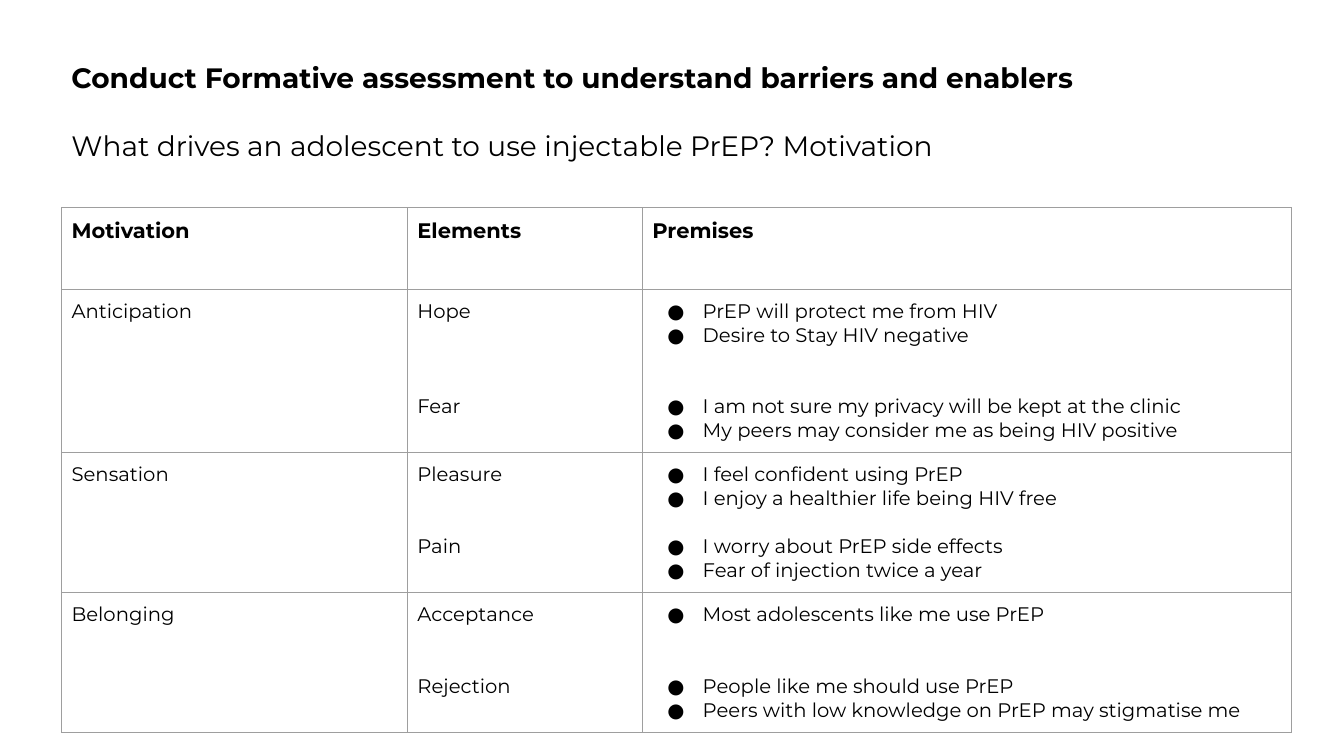
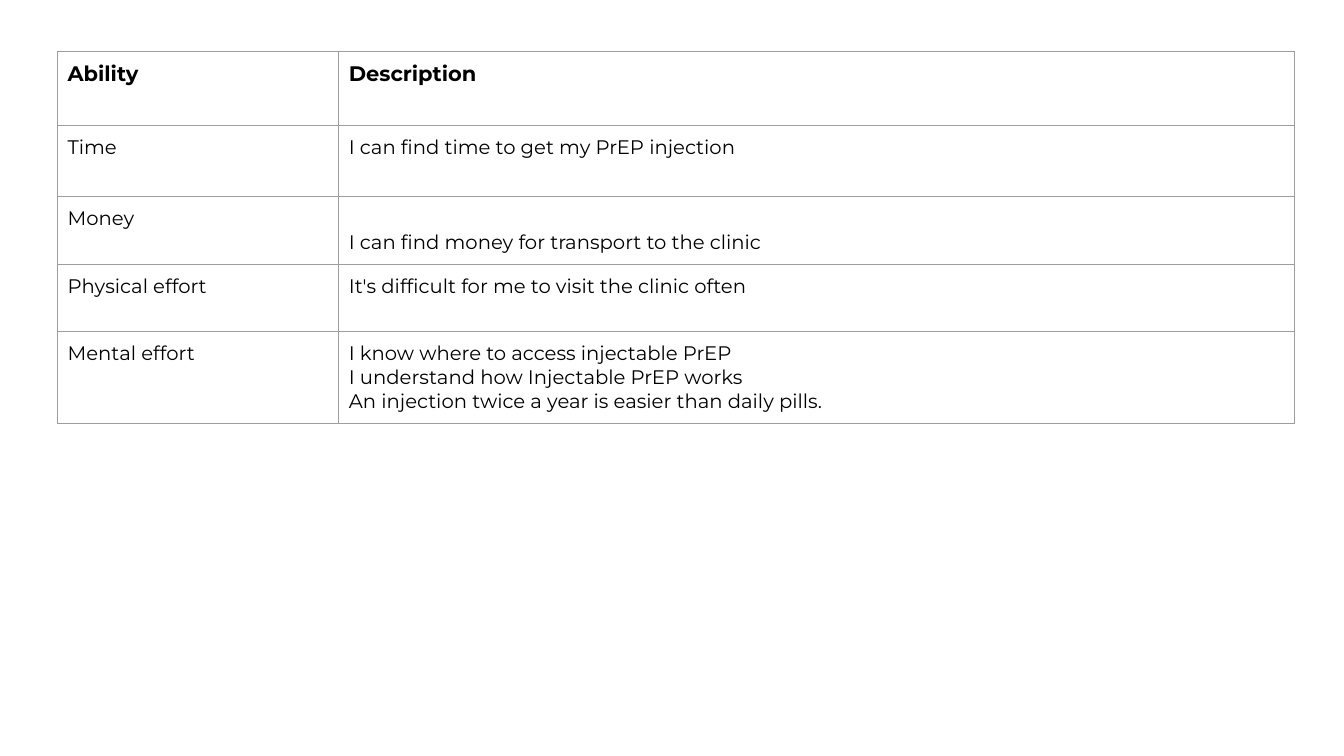
from lxml import etree
from pptx import Presentation
from pptx.dml.color import RGBColor
from pptx.enum.text import MSO_ANCHOR
from pptx.oxml.ns import qn
from pptx.util import Inches, Pt

TOP, BOTTOM = MSO_ANCHOR.TOP, MSO_ANCHOR.BOTTOM
COLORS = {"text": "000000", "grid": "9E9E9E"}
FACE = "Montserrat"
LEAD = 1.22
PAD = {"margin_" + side: Inches(0.1) for side in ("left", "right", "top", "bottom")}
STYLES = {
    "title": {"size": Pt(20), "bold": True},
    "lead": {"size": Pt(20), "bold": False},
    "head": {"size": Pt(15), "bold": True},
    "body": {"size": Pt(14), "bold": False},
}

MOTIVES = [
    ("Motivation", "Elements", "Premises"),
    ("Anticipation", "Hope\n\n\n\nFear",
     "PrEP will protect me from HIV\nDesire to Stay HIV negative\n\n\n"
     "I am not sure my privacy will be kept at the clinic\n"
     "My peers may consider me as being HIV positive"),
    ("Sensation", "Pleasure\n\n\nPain",
     "I feel confident using PrEP\nI enjoy a healthier life being HIV free\n\n"
     "I worry about PrEP side effects\nFear of injection twice a year"),
    ("Belonging", "Acceptance\n\n\nRejection",
     "Most adolescents like me use PrEP\n\n\nPeople like me should use PrEP\n"
     "Peers with low knowledge on PrEP may stigmatise me"),
]
SKILLS = [
    ("Ability", "Description"),
    ("Time", "I can find time to get my PrEP injection"),
    ("Money", "I can find money for transport to the clinic"),
    ("Physical effort", "It's difficult for me to visit the clinic often"),
    ("Mental effort",
     "I know where to access injectable PrEP\n"
     "I understand how Injectable PrEP works\n"
     "An injection twice a year is easier than daily pills."),
]


def apply(item, values):
    """Set every attribute named in a dict."""
    for name, value in values.items():
        setattr(item, name, value)


def node(parent, tag, **attrs):
    """Add a drawing element under a parent."""
    return etree.SubElement(parent, qn("a:" + tag), attrs)


def write(para, text, style):
    """Put one styled run in a paragraph."""
    run = para.add_run()
    run.text = text
    apply(run.font, {"name": FACE, **STYLES[style]})
    run.font.color.rgb = RGBColor.from_string(COLORS["text"])


def bullet(para):
    """Give a paragraph a round bullet and a hanging indent."""
    props = para._p.get_or_add_pPr()
    props.set("marL", str(Inches(0.5)))
    props.set("indent", str(Inches(-0.35)))
    node(node(props, "buClr"), "srgbClr", val=COLORS["text"])
    node(props, "buFont", typeface=FACE)
    node(props, "buChar", char="●")


def fill(frame, text, style, dots=False):
    """Write lines, turning each empty line into space before the next."""
    gap, first = 0, True
    for line in text.split("\n"):
        if not line:
            gap += 1
            continue
        para = frame.paragraphs[0] if first else frame.add_paragraph()
        para.space_before = Pt(round(gap * STYLES[style]["size"].pt * LEAD, 1))
        write(para, line, style)
        if dots:
            bullet(para)
        gap, first = 0, False


def border(cell):
    """Draw a thin line on all four sides of a cell."""
    props = cell._tc.get_or_add_tcPr()
    for spot, side in enumerate(("lnL", "lnR", "lnT", "lnB")):
        line = node(props, side, w=str(Pt(0.75)))
        node(node(line, "solidFill"), "srgbClr", val=COLORS["grid"])
        props.insert(spot, line)


def grid(slide, left, top, widths, heights, rows, dots=None, low=None):
    """Place a table; dots is the bulleted column, low the bottom-set cell."""
    size = Inches(sum(widths)), Inches(sum(heights))
    table = slide.shapes.add_table(
        len(rows), len(widths), Inches(left), Inches(top), *size).table
    apply(table, {"first_row": False, "horz_banding": False})
    for col, width in zip(table.columns, widths):
        col.width = Inches(width)
    for row, height in zip(table.rows, heights):
        row.height = Inches(height)
    for r, texts in enumerate(rows):
        for c, text in enumerate(texts):
            cell = table.cell(r, c)
            anchor = BOTTOM if (r, c) == low else TOP
            apply(cell, {**PAD, "vertical_anchor": anchor})
            cell.fill.background()
            border(cell)
            fill(cell.text_frame, text, "body" if r else "head", r > 0 and c == dots)


def header(slide, left, top, width, height, title, lead):
    """Place a bold title with a lighter question below."""
    box = slide.shapes.add_textbox(*map(Inches, (left, top, width, height)))
    frame = box.text_frame
    apply(frame, {**PAD, "word_wrap": True, "vertical_anchor": TOP})
    fill(frame, title, "title")
    para = frame.add_paragraph()
    para.space_before = Pt(24.4)
    write(para, lead, "lead")


def main():
    """Build both slides and save them."""
    deck = Presentation()
    apply(deck, {"slide_width": Inches(13.33), "slide_height": Inches(7.5)})
    blank = deck.slide_layouts[6]

    slide = deck.slides.add_slide(blank)
    grid(slide, 0.61, 2.06, (3.43, 2.33, 6.44), (0.81, 1.62, 1.39, 1.38),
         MOTIVES, dots=2)
    header(slide, 0.61, 0.5, 12.2, 1.27,
           "Conduct Formative assessment to understand barriers and enablers",
           "What drives an adolescent to use injectable PrEP? Motivation")

    slide = deck.slides.add_slide(blank)
    grid(slide, 0.57, 0.51, (2.79, 9.48), (0.73, 0.71, 0.67, 0.67, 0.91),
         SKILLS, low=(2, 1))
    deck.save("out.pptx")


if __name__ == "__main__":
    main()
